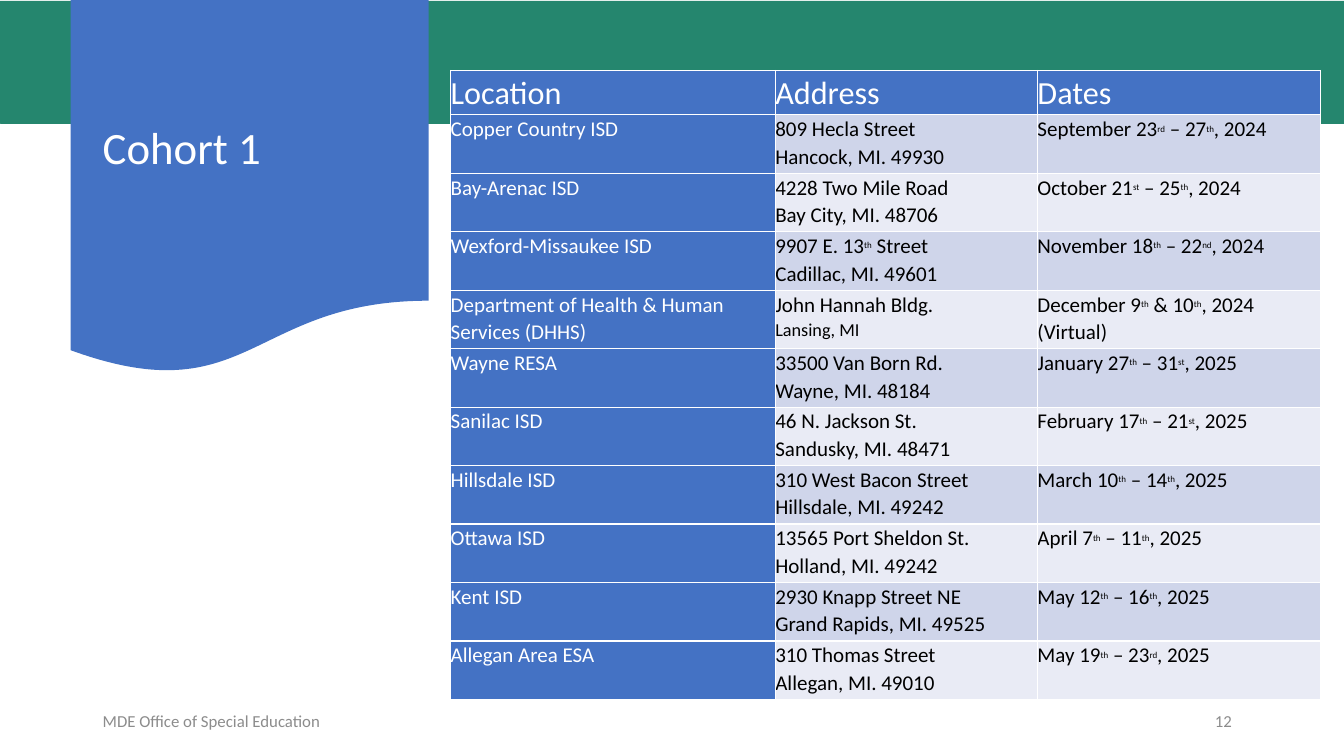
"""Build the Cohort 1 schedule slide."""
from lxml import etree
from pptx import Presentation
from pptx.dml.color import RGBColor
from pptx.enum.shapes import MSO_SHAPE as Shape
from pptx.enum.text import MSO_ANCHOR as Anchor
from pptx.oxml.ns import qn
from pptx.util import Inches, Pt

COLORS = {
    "green": "25866E",
    "blue": "4472C4",
    "white": "FFFFFF",
    "black": "000000",
    "gray": "8C8C8C",
    "dark_band": "CFD5EA",
    "light_band": "E9EBF5",
}

HEADINGS = ("Location", "Address", "Dates")
VISITS = [
    ("Copper Country ISD", ["809 Hecla Street", "Hancock, MI. 49930"], "September 23^rd^ – 27^th^, 2024"),
    ("Bay-Arenac ISD", ["4228 Two Mile Road", "Bay City, MI. 48706"], "October 21^st^ – 25^th^, 2024"),
    ("Wexford-Missaukee ISD", ["9907 E. 13^th^ Street", "Cadillac, MI. 49601"], "November 18^th^ – 22^nd^, 2024"),
    ("Department of Health & Human Services (DHHS)", ["John Hannah Bldg.", ("Lansing, MI", 13)],
     "December 9^th^ & 10^th^, 2024 (Virtual)"),
    ("Wayne RESA", ["33500 Van Born Rd.", "Wayne, MI. 48184"], "January 27^th^ – 31^st^, 2025"),
    ("Sanilac ISD", ["46 N. Jackson St.", "Sandusky, MI. 48471"], "February 17^th^ – 21^st^, 2025"),
    ("Hillsdale ISD", ["310 West Bacon Street", "Hillsdale, MI. 49242"], "March 10^th^ – 14^th^, 2025"),
    ("Ottawa ISD", ["13565 Port Sheldon St.", "Holland, MI. 49242"], "April 7^th^ – 11^th^, 2025"),
    ("Kent ISD", ["2930 Knapp Street NE", "Grand Rapids, MI. 49525"], "May 12^th^ – 16^th^, 2025"),
    ("Allegan Area ESA", ["310 Thomas Street", "Allegan, MI. 49010"], "May 19^th^ – 23^rd^, 2025"),
]


def rgb(name):
    """Return the named color."""
    return RGBColor.from_string(COLORS[name])


def write_text(paragraph, text, size=15, color="black", spacing=None, after=None):
    """Write text into a paragraph, raising the parts between carets."""
    paragraph.line_spacing = spacing
    if after is not None:
        paragraph.space_after = Pt(after)
    for index, part in enumerate(text.split("^")):
        run = paragraph.add_run()
        run.text = part
        raised = index % 2 == 1
        run.font.size = Pt(11 if raised else size)
        run.font.name = "Calibri"
        run.font.color.rgb = rgb(color)
        if raised:
            run.font._element.set("baseline", "30000")


class SlideBuilder:
    """Hold the current slide and its table style."""

    def __init__(self, slide, border_width=1, cell_spacing=1.07):
        """Keep the slide and the style values."""
        self.slide = slide
        self.border_width = border_width
        self.cell_spacing = cell_spacing

    def add_block(self, kind, left, top, width, height, color, line_width=None):
        """Add a filled preset shape."""
        shape = self.slide.shapes.add_shape(kind, Inches(left), Inches(top), Inches(width), Inches(height))
        shape.shadow.inherit = False
        shape.fill.solid()
        shape.fill.fore_color.rgb = rgb(color)
        if line_width is None:
            shape.line.fill.background()
        else:
            shape.line.color.rgb = rgb(color)
            shape.line.width = Pt(line_width)

    def add_text(self, text, left, top, width, height, **text_format):
        """Add a vertically centered text box."""
        box = self.slide.shapes.add_textbox(Inches(left), Inches(top), Inches(width), Inches(height))
        frame = box.text_frame
        frame.word_wrap = True
        frame.vertical_anchor = Anchor.MIDDLE
        write_text(frame.paragraphs[0], text, **text_format)

    def fill_cell(self, cell, lines, fill, **text_format):
        """Set the text, borders and fill of a cell."""
        cell.margin_left = cell.margin_right = cell.margin_top = cell.margin_bottom = 0
        frame = cell.text_frame
        for index, line in enumerate(lines):
            paragraph = frame.add_paragraph() if index else frame.paragraphs[0]
            line_format = dict(text_format, spacing=self.cell_spacing)
            if isinstance(line, tuple):
                line, line_format["size"] = line
            write_text(paragraph, line, **line_format)
        properties = cell._tc.get_or_add_tcPr()
        for side in ("lnL", "lnR", "lnT", "lnB"):
            border = etree.SubElement(properties, qn(f"a:{side}"), w=str(Pt(self.border_width)))
            solid = etree.SubElement(border, qn("a:solidFill"))
            etree.SubElement(solid, qn("a:srgbClr"), val=COLORS["white"])
        cell.fill.solid()
        cell.fill.fore_color.rgb = rgb(fill)

    def add_schedule(self, left, top, widths, header_height, row_height):
        """Add the table of visits."""
        row_count = len(VISITS) + 1
        height = header_height + row_height * len(VISITS)
        table = self.slide.shapes.add_table(
            row_count, len(widths), Inches(left), Inches(top), Inches(sum(widths)), Inches(height)).table
        table.first_row = table.horz_banding = False
        for column, width in zip(table.columns, widths):
            column.width = Inches(width)
        for index, row in enumerate(table.rows):
            row.height = Inches(row_height if index else header_height)
        for column, heading in enumerate(HEADINGS):
            self.fill_cell(table.cell(0, column), [heading], "blue", size=23, color="white")
        for row, (location, address, dates) in enumerate(VISITS, start=1):
            band = "dark_band" if row % 2 else "light_band"
            self.fill_cell(table.cell(row, 0), [location], "blue", color="white")
            self.fill_cell(table.cell(row, 1), address, band)
            self.fill_cell(table.cell(row, 2), [dates], band)


def main():
    """Create and save the presentation."""
    presentation = Presentation()
    presentation.slide_width = Inches(13.33)
    presentation.slide_height = Inches(7.5)
    builder = SlideBuilder(presentation.slides.add_slide(presentation.slide_layouts[6]))
    builder.add_block(Shape.RECTANGLE, 0, 0.01, 13.33, 1.21, "green", line_width=0.5)
    builder.add_block(Shape.FLOWCHART_DOCUMENT, 0.7, 0, 3.55, 3.72, "blue")
    builder.add_text("Cohort 1", 0.92, 0.19, 3.11, 2.59, size=32, color="white", spacing=0.9)
    footer_format = {"size": 12, "color": "gray", "after": 6}
    builder.add_text("MDE Office of Special Education", 0.92, 6.95, 6.52, 0.4, **footer_format)
    builder.add_text("12", 11.95, 6.95, 0.68, 0.4, **footer_format)
    builder.add_schedule(4.47, 0.7, (3.22, 2.6, 2.81), header_height=0.44, row_height=0.58)
    presentation.save("out.pptx")


if __name__ == "__main__":
    main()
